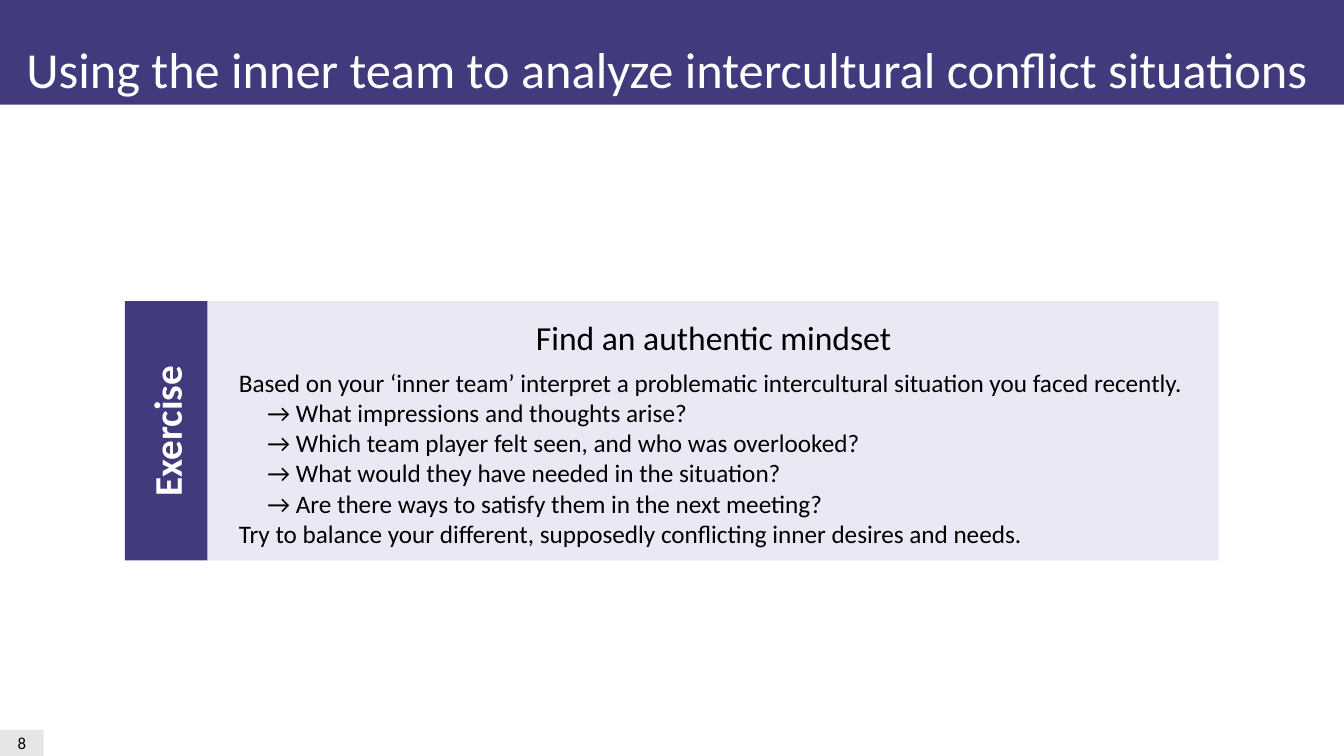
from dataclasses import dataclass

from pptx import Presentation
from pptx import util as u
from pptx.dml.color import RGBColor
from pptx.enum import shapes, text

FONT = "Calibri"
PURPLE, LILAC, GREY = "413A7D", "E9E8F4", "E7E6E6"
BLACK, WHITE = "000000", "FFFFFF"
LEFT, CENTER = text.PP_ALIGN.LEFT, text.PP_ALIGN.CENTER
TOP, MIDDLE = text.MSO_ANCHOR.TOP, text.MSO_ANCHOR.MIDDLE


@dataclass
class Box:
    """Position and size in centimetres."""
    x: float
    y: float
    w: float
    h: float

    def lengths(self) -> list:
        return [u.Cm(v) for v in (self.x, self.y, self.w, self.h)]


@dataclass
class Line:
    """One paragraph and its left indent in centimetres."""
    words: str
    indent: float = 0


def rgb(code: str) -> RGBColor:
    return RGBColor.from_string(code)


def add_rect(s, box: Box, fill: str):
    sp = s.shapes.add_shape(shapes.MSO_SHAPE.RECTANGLE, *box.lengths())
    sp.shadow.inherit = False
    sp.fill.solid()
    sp.fill.fore_color.rgb = rgb(fill)
    sp.line.fill.background()
    return sp


def write(sp, *lines: Line, size: float, color: str = BLACK, bold: bool = False,
          align=LEFT, anchor=TOP, wrap: bool = True) -> None:
    tf = sp.text_frame
    tf.auto_size = text.MSO_AUTO_SIZE.NONE
    tf.word_wrap = wrap
    tf.vertical_anchor = anchor
    for i, line in enumerate(lines):
        p = tf.add_paragraph() if i else tf.paragraphs[0]
        p.alignment = align
        p.line_spacing = 1.0
        p.space_before = u.Pt(0)
        if line.indent:
            p._p.get_or_add_pPr().set("marL", str(u.Cm(line.indent)))
        r = p.add_run()
        r.text = line.words
        r.font.name = FONT
        r.font.size = u.Pt(size)
        r.font.bold = bold
        r.font.color.rgb = rgb(color)


def add_text(s, box: Box, *lines: Line, **style):
    sp = s.shapes.add_textbox(*box.lengths())
    write(sp, *lines, **style)
    return sp


def main() -> None:
    prs = Presentation()
    prs.slide_width, prs.slide_height = u.Cm(33.87), u.Cm(19.05)
    s = prs.slides.add_slide(prs.slide_layouts[5])

    # Slide number
    number = add_rect(s, Box(0, 18.39, 1.1, 0.66), GREY)
    write(number, Line("8"), size=12, align=CENTER, anchor=MIDDLE)

    # Title in front of its band
    band = add_rect(s, Box(0, -0.03, 33.88, 2.67), PURPLE)
    title = s.shapes.title
    band._element.addnext(title._element)
    title.left, title.top, title.width, title.height = Box(0.41, 0.84, 33.4, 1.8).lengths()
    write(title, Line("Using the inner team to analyze intercultural conflict situations"),
          size=36, color=WHITE, wrap=False)

    # Exercise card
    add_rect(s, Box(5.23, 7.59, 25.48, 6.53), LILAC)
    add_text(s, Box(5.77, 7.85, 24.43, 1.27), Line("Find an authentic mindset"),
             size=24, align=CENTER)

    # Side strip with upright label
    add_rect(s, Box(3.15, 7.59, 2.08, 6.53), PURPLE)
    label = add_text(s, Box(2.24, 10.08, 3.91, 1.45), Line("Exercise"),
                     size=28, color=WHITE, bold=True)
    label.rotation = 270

    # Task and guiding questions
    questions = [
        "What impressions and thoughts arise?",
        "Which team player felt seen, and who was overlooked?",
        "What would they have needed in the situation?",
        "Are there ways to satisfy them in the next meeting?",
    ]
    add_text(
        s, Box(5.77, 9.12, 24.64, 4.88),
        Line("Based on your ‘inner team’ interpret a problematic intercultural "
             "situation you faced recently."),
        *(Line(f"→ {q}", indent=0.72) for q in questions),
        Line("Try to balance your different, supposedly conflicting inner desires and needs."),
        size=18)

    prs.save("out.pptx")


if __name__ == "__main__":
    main()
